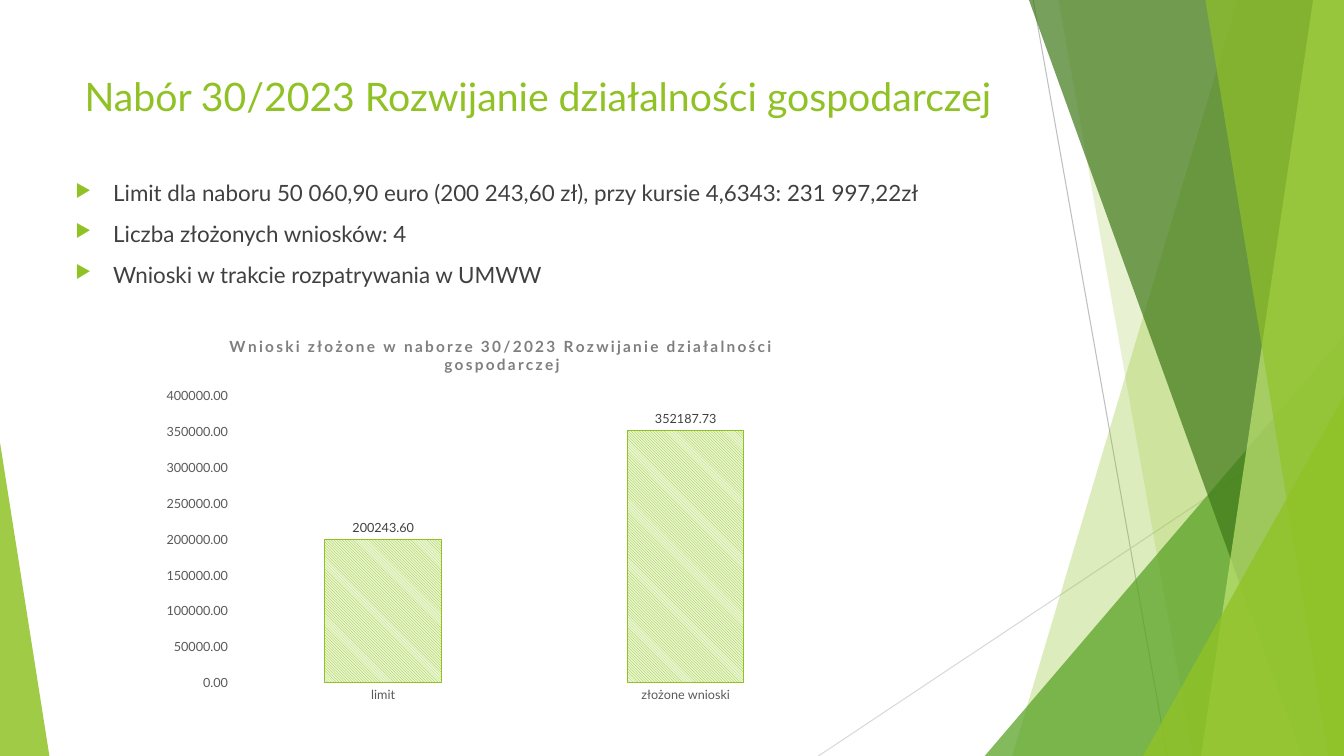
from lxml import etree
from pptx import Presentation
from pptx.chart.data import CategoryChartData
from pptx.dml.color import RGBColor
from pptx.enum.chart import XL_CHART_TYPE as ChartType, XL_LABEL_POSITION as LabelPosition
from pptx.enum.chart import XL_TICK_MARK as TickMark
from pptx.enum.dml import MSO_PATTERN as Pattern
from pptx.enum.shapes import MSO_CONNECTOR as Connector, MSO_SHAPE as Shape
from pptx.enum.text import MSO_ANCHOR as Anchor, PP_ALIGN as Align
from pptx.oxml import parse_xml
from pptx.oxml.ns import nsdecls, qn
from pptx.util import Pt

# Content
FONT = "Lato"
TITLE = "Nabór 30/2023 Rozwijanie działalności gospodarczej"
BULLETS = [
    "Limit dla naboru 50 060,90 euro (200 243,60 zł), przy kursie 4,6343: 231 997,22zł",
    "Liczba złożonych wniosków: 4",
    "Wnioski w trakcie rozpatrywania w UMWW",
]
CHART_TITLE = "Wnioski złożone w naborze 30/2023 Rozwijanie działalności gospodarczej"
APPLICATIONS = {"limit": 200243.60, "złożone wnioski": 352187.73}

# Colours
LIME = RGBColor(0x90, 0xC2, 0x26)
PALE_LIME = RGBColor(0xEA, 0xF6, 0xD1)
LIGHT_LIME = RGBColor(0xC0, 0xE4, 0x74)
GREEN = RGBColor(0x54, 0xA0, 0x21)
DARK_GREEN = RGBColor(0x3F, 0x78, 0x19)
SILVER = RGBColor(0xBF, 0xBF, 0xBF)
PALE_GREY = RGBColor(0xD9, 0xD9, 0xD9)
MID_GREY = RGBColor(0x7F, 0x7F, 0x7F)
AXIS_GREY = RGBColor(0x59, 0x59, 0x59)
TEXT_GREY = RGBColor(0x40, 0x40, 0x40)

# Decoration, back to front, in points
WIDTH, HEIGHT = 960, 540
LINES = [((738, 0), (833.8, HEIGHT), SILVER), ((WIDTH, 290.2), (584.6, HEIGHT), PALE_GREY)]
# Bands run to the right edge: top x, bottom x. Wedges stand on the bottom: left, top, width, apex.
FACETS = [
    ("band", (884.2, 722.9), LIME, 30),
    ("band", (756, 851.8), LIME, 20),
    ("wedge", (703.4, 239.8, 256.6, 1), GREEN, 72),
    ("band", (735.1, 929.5), DARK_GREEN, 70),
    ("band", (938.2, 858.2), LIGHT_LIME, 70),
    ("band", (861.1, 949), LIME, 65),
    ("wedge", (816.5, 283, 143.5, 1), LIME, 80),
    ("wedge", (0, 316.1, 35.3, 0), LIME, 85),
]


def style_font(font, size, color, bold=False):
    font.name, font.size, font.bold = FONT, Pt(size), bold
    font.color.rgb = color


def place(shape, left, top, width, height):
    shape.left, shape.top, shape.width, shape.height = map(Pt, (left, top, width, height))


def add_line(shapes, start, end, color):
    line = shapes.add_connector(Connector.STRAIGHT, *map(Pt, start + end))
    line.line.color.rgb = color
    line.line.width = Pt(0.75)
    etree.SubElement(line._element.spPr, qn("a:effectLst"))


def add_facet(shapes, kind, geometry, color, opacity):
    if kind == "band":
        top_x, bottom_x = geometry
        builder = shapes.build_freeform(top_x, 0, scale=Pt(1))
        builder.add_line_segments([(WIDTH, 0), (WIDTH, HEIGHT), (bottom_x, HEIGHT)])
        facet = builder.convert_to_shape()
    else:
        left, top, width, apex = geometry
        facet = shapes.add_shape(
            Shape.ISOSCELES_TRIANGLE, Pt(left), Pt(top), Pt(width), Pt(HEIGHT - top))
        facet.adjustments[0] = apex
    facet.shadow.inherit = False
    facet.fill.solid()
    facet.fill.fore_color.rgb = color
    facet.line.fill.background()
    color_element = facet._element.spPr.find(qn("a:solidFill"))[0]
    etree.SubElement(color_element, qn("a:alpha")).set("val", str(opacity * 1000))


def add_bullet(paragraph, text):
    paragraph.space_before = Pt(10)
    properties = paragraph._p.get_or_add_pPr()
    properties.set("marL", str(Pt(27)))
    properties.set("indent", str(Pt(-27)))
    color = etree.SubElement(properties, qn("a:buClr"))
    etree.SubElement(color, qn("a:srgbClr")).set("val", str(LIME))
    etree.SubElement(properties, qn("a:buSzPct")).set("val", "80000")
    etree.SubElement(properties, qn("a:buChar")).set("char", "▶")
    run = paragraph.add_run()
    run.text = text
    style_font(run.font, 16, TEXT_GREY)


def add_applications_chart(shapes):
    data = CategoryChartData(number_format="0.00")
    data.categories = list(APPLICATIONS)
    data.add_series("Wnioski", list(APPLICATIONS.values()))
    chart = shapes.add_chart(
        ChartType.COLUMN_CLUSTERED, Pt(108.7), Pt(227.5), Pt(499.7), Pt(279.4), data).chart
    style_font(chart.font, 10, TEXT_GREY)
    chart.has_legend = False

    # Chart title
    chart.has_title = True
    chart.chart_title.include_in_layout = False
    run = chart.chart_title.text_frame.paragraphs[0].add_run()
    run.text = CHART_TITLE
    style_font(run.font, 11, MID_GREY, bold=True)
    run._r.get_or_add_rPr().set("spc", "150")

    # Axes
    for axis in (chart.category_axis, chart.value_axis):
        axis.major_tick_mark = axis.minor_tick_mark = TickMark.NONE
        axis.has_major_gridlines = False
        axis.format.line.fill.background()
        style_font(axis.tick_labels.font, 9, AXIS_GREY)
    chart.value_axis.minimum_scale, chart.value_axis.maximum_scale = 0, 400000
    chart.value_axis.major_unit = 50000
    chart.value_axis.tick_labels.number_format = "0.00"
    chart.value_axis.tick_labels.number_format_is_linked = False

    # Columns and labels
    plot = chart.plots[0]
    plot.gap_width = 160
    plot.vary_by_categories = False
    columns = plot.series[0].format
    columns.fill.patterned()
    columns.fill.pattern = Pattern.LIGHT_DOWNWARD_DIAGONAL
    columns.fill.fore_color.rgb = LIME
    columns.fill.back_color.rgb = PALE_LIME
    columns.line.color.rgb = LIME
    columns.line.width = Pt(0.75)
    plot.has_data_labels = True
    labels = plot.data_labels
    labels.show_value = True
    labels.position = LabelPosition.OUTSIDE_END
    labels.number_format, labels.number_format_is_linked = "0.00", False
    style_font(labels.font, 9, TEXT_GREY)

    # Plot area as shares of the chart
    plot_area = chart._chartSpace.chart.plotArea
    for layout in plot_area.findall(qn("c:layout")):
        plot_area.remove(layout)
    settings = [("layoutTarget", "inner"), ("xMode", "edge"), ("yMode", "edge"),
                ("x", 0.114), ("y", 0.198), ("w", 0.865), ("h", 0.734)]
    items = "".join(f'<c:{name} val="{value}"/>' for name, value in settings)
    plot_area.insert(0, parse_xml(
        f'<c:layout {nsdecls("c")}><c:manualLayout>{items}</c:manualLayout></c:layout>'))


def main():
    presentation = Presentation()
    presentation.slide_width, presentation.slide_height = Pt(WIDTH), Pt(HEIGHT)
    slide = presentation.slides.add_slide(presentation.slide_layouts[5])
    shapes = slide.shapes

    # Background facets
    for line in LINES:
        add_line(shapes, *line)
    for facet in FACETS:
        add_facet(shapes, *facet)

    # Title
    title = shapes.title
    place(title, 53.3, 48.2, 679.7, 50.4)
    title.text_frame.vertical_anchor = Anchor.TOP
    paragraph = title.text_frame.paragraphs[0]
    paragraph.alignment = Align.LEFT
    run = paragraph.add_run()
    run.text = TITLE
    style_font(run.font, 28, LIME)

    # Bullets
    frame = shapes.add_textbox(Pt(46.8), Pt(124.6), Pt(701.3), Pt(95)).text_frame
    frame.word_wrap = True
    for index, text in enumerate(BULLETS):
        add_bullet(frame.add_paragraph() if index else frame.paragraphs[0], text)

    add_applications_chart(shapes)
    presentation.save("out.pptx")


if __name__ == "__main__":
    main()
